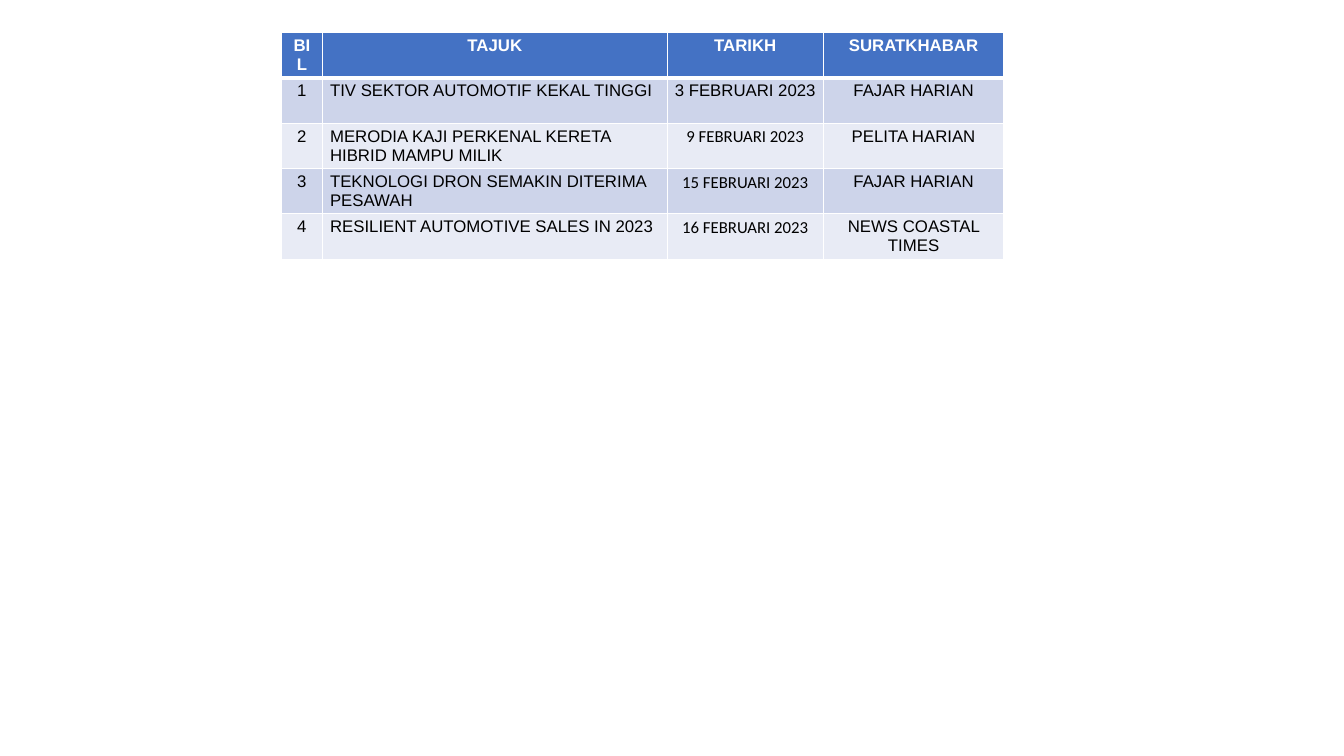
"""Build a slide with a table of newspaper articles."""
from lxml import etree
from pptx import Presentation
from pptx.dml.color import RGBColor
from pptx.enum.text import PP_ALIGN
from pptx.oxml.ns import qn
from pptx.util import Pt

LEFT, MID = PP_ALIGN.LEFT, PP_ALIGN.CENTER
WHITE = RGBColor(0xFF, 0xFF, 0xFF)
BLACK = RGBColor(0, 0, 0)
BLUE = RGBColor(0x44, 0x72, 0xC4)
BANDS = [RGBColor(0xE8, 0xEB, 0xF5), RGBColor(0xCD, 0xD4, 0xEA)]
WIDTHS = [29.5, 246.2, 111.6, 128.9]
HEIGHT = 32.4
ROWS = [
    ("BIL", "TAJUK", "TARIKH", "SURATKHABAR"),
    ("1", "TIV SEKTOR AUTOMOTIF KEKAL TINGGI", "3 FEBRUARI 2023", "FAJAR HARIAN"),
    ("2", "MERODIA KAJI PERKENAL KERETA HIBRID MAMPU MILIK", "9 FEBRUARI 2023", "PELITA HARIAN"),
    ("3", "TEKNOLOGI DRON SEMAKIN DITERIMA PESAWAH", "15 FEBRUARI 2023", "FAJAR HARIAN"),
    ("4", "RESILIENT AUTOMOTIVE SALES IN 2023", "16 FEBRUARI 2023", "NEWS COASTAL TIMES"),
]


def add_edges(cell, row):
    """Draw white lines round a cell, thicker under the header."""
    props = cell._tc.get_or_add_tcPr()
    for spot, side in enumerate(("lnL", "lnR", "lnT", "lnB")):
        thick = (row, side) in ((0, "lnB"), (1, "lnT"))
        line = etree.Element(qn("a:" + side), w=str(Pt(3 if thick else 1)))
        fill = etree.SubElement(line, qn("a:solidFill"))
        etree.SubElement(fill, qn("a:srgbClr"), val=str(WHITE))
        props.insert(spot, line)


deck = Presentation()
deck.slide_width, deck.slide_height = Pt(960), Pt(540)
slide = deck.slides.add_slide(deck.slide_layouts[6])
frame = slide.shapes.add_table(len(ROWS), len(WIDTHS), Pt(200.9), Pt(23.2),
                               Pt(sum(WIDTHS)), Pt(HEIGHT * len(ROWS)))
table = frame.table
for col, width in zip(table.columns, WIDTHS):
    col.width = Pt(width)

for r, texts in enumerate(ROWS):
    table.rows[r].height = Pt(HEIGHT)
    for c, text in enumerate(texts):
        cell = table.cell(r, c)
        cell.margin_left = cell.margin_right = Pt(5.4)
        cell.margin_top = cell.margin_bottom = Pt(2.7)
        cell.fill.solid()
        cell.fill.fore_color.rgb = BANDS[r % 2] if r else BLUE
        add_edges(cell, r)
        cell.text_frame.text = text
        para = cell.text_frame.paragraphs[0]
        para.alignment = LEFT if r and c == 1 else MID
        font = para.runs[0].font
        font.name = "Calibri" if r > 1 and c == 2 else "Arial"
        font.size = Pt(12)
        font.bold = r == 0
        font.color.rgb = BLACK if r else WHITE

deck.save("out.pptx")
